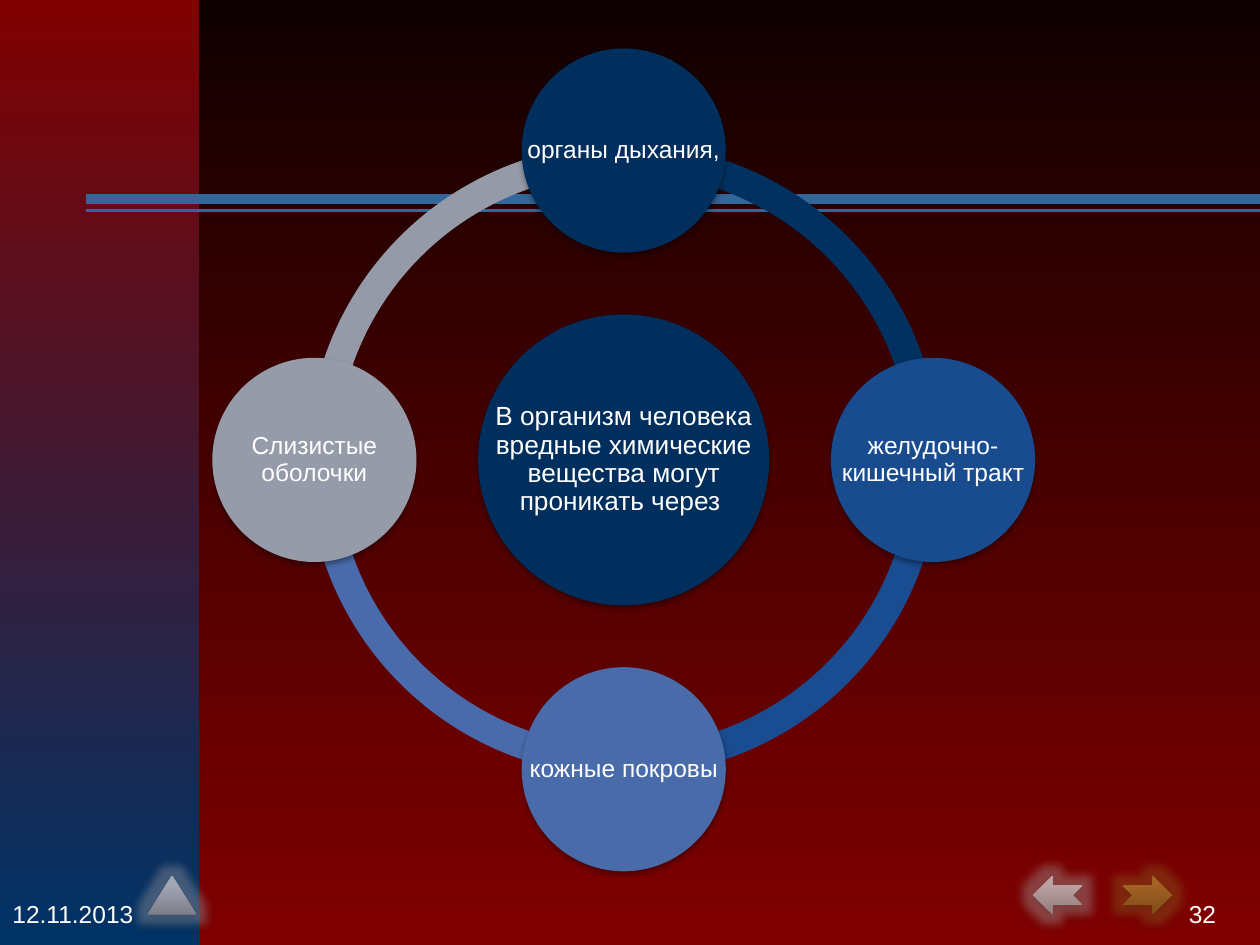
from math import cos, sin, radians
from lxml import etree
from pptx import Presentation
from pptx.dml.color import RGBColor
from pptx.enum import shapes, text
from pptx.oxml.ns import qn
from pptx.util import Inches, Pt

COLORS = {
    "white": "FFFFFF", "black": "000000", "night": "100000", "red": "800000",
    "navy": "003366", "rule": "336699", "hub": "002E5D", "blue": "194B8F",
    "sky": "496BAA", "grey": "959BA9", "navy arc": "003161", "blue arc": "1A4C91",
    "sky arc": "496BAB", "grey arc": "959AA8", "gold dark": "7E4C1B",
    "gold": "A36323", "rose dark": "927C7C", "rose": "BDA2A2",
    "steel dark": "7D808B", "steel": "A3A6B4",
}
FONT = "Arial"
HUB = "В организм человека вредные химические вещества могут проникать через "
# clockwise from the top: label, circle colour, colour of the arc that follows
ROUTES = [
    ("органы дыхания, ", "hub", "navy arc"),
    ("желудочно-кишечный тракт", "blue", "blue arc"),
    ("кожные покровы", "sky", "sky arc"),
    ("Слизистые оболочки", "grey", "grey arc"),
]
KIND = shapes.MSO_SHAPE
# left, shape, dark colour, light colour, flipped
BUTTONS = [
    (8.91, KIND.NOTCHED_RIGHT_ARROW, "gold dark", "gold", False),
    (8.2, KIND.NOTCHED_RIGHT_ARROW, "rose dark", "rose", True),
    (1.17, KIND.FLOWCHART_EXTRACT, "steel dark", "steel", False),
]
RULES = [(1.67, 2), (1.58, 6)]  # height on the slide, line width
MID_X, MID_Y, ORBIT = 4.95, 3.65, 2.455
RING, HUB_SIZE, NODE_SIZE = 5.02, 2.31, 1.62

deck = Presentation()
deck.slide_width, deck.slide_height = Inches(10), Inches(7.5)
slide = deck.slides.add_slide(deck.slide_layouts[6])


def rgb(name):
    return RGBColor.from_string(COLORS[name])


def blend(fill, first, last, angle, end=1):
    fill.gradient()
    fill.gradient_angle = angle
    for stop, name, pos in zip(fill.gradient_stops, (first, last), (0, end)):
        stop.color.rgb = rgb(name)
        stop.position = pos


def effects(shape, shadow=None, glow=None):
    """Set the glow colour and the shadow's (alpha, distance), or no effects."""
    props = shape._element.spPr
    for old in props.findall(qn("a:effectLst")):
        props.remove(old)
    box = etree.SubElement(props, qn("a:effectLst"))

    def add(tag, name, alpha, **attrs):
        node = etree.SubElement(box, qn(tag), attrs)
        tint = etree.SubElement(node, qn("a:srgbClr"), val=COLORS[name])
        etree.SubElement(tint, qn("a:alpha"), val=str(alpha * 1000))

    if glow:
        add("a:glow", glow, 40, rad=str(Pt(11)))
    if shadow:
        alpha, dist = shadow
        add("a:outerShdw", "black", alpha, blurRad=str(Pt(3.1)),
            dist=str(Pt(dist)), dir="5400000", rotWithShape="0")


def form(kind, x, y, w, h, fill=None):
    shape = slide.shapes.add_shape(kind, *map(Inches, (x, y, w, h)))
    shape.shadow.inherit = False
    shape.line.fill.background()
    if fill:
        shape.fill.solid()
        shape.fill.fore_color.rgb = rgb(fill)
    return shape


def label(words, x, y, w, h, size, align, inset=(0.1, 0.05), wrap=True):
    frame = slide.shapes.add_textbox(*map(Inches, (x, y, w, h))).text_frame
    frame.word_wrap = wrap
    frame.vertical_anchor = text.MSO_ANCHOR.MIDDLE
    frame.margin_left = frame.margin_right = Inches(inset[0])
    frame.margin_top = frame.margin_bottom = Inches(inset[1])
    para = frame.paragraphs[0]
    para.alignment = align
    run = para.add_run()
    run.text = words
    run.font.name, run.font.size = FONT, Pt(size)
    run.font.color.rgb = rgb("white")
    return para


def disc(words, x, y, size, fill, points, shadow):
    """Draw a circle centred on x, y with its label."""
    box = (x - size / 2, y - size / 2, size, size)
    effects(form(KIND.OVAL, *box, fill), shadow)
    para = label(words, *box, points, text.PP_ALIGN.CENTER, (0.02, 0.02))
    para.line_spacing = 0.9


blend(slide.background.fill, "night", "red", 270)
blend(form(KIND.RECTANGLE, 0, 0, 1.58, 7.5).fill, "red", "navy", 270)

for y, width in RULES:
    rule = slide.shapes.add_connector(
        shapes.MSO_CONNECTOR.STRAIGHT, *map(Inches, (0.68, y, 10, y)))
    rule.line.color.rgb, rule.line.width = rgb("rule"), Pt(width)
    effects(rule)

for i, (_, _, tone) in reversed(list(enumerate(ROUTES))):
    arc = form(KIND.BLOCK_ARC, MID_X - RING / 2, MID_Y - RING / 2, RING, RING, tone)
    # an angle adjustment of 54 is a quarter turn
    start = (i + 3) % 4 * 54
    for k, value in enumerate((start, (start + 54) % 216, 0.046)):
        arc.adjustments[k] = value

disc(HUB, MID_X, MID_Y, HUB_SIZE, "hub", 15, (38, 1.6))
for i, (words, tone, _) in enumerate(ROUTES):
    turn = radians(90 * i - 90)
    disc(words, MID_X + ORBIT * cos(turn), MID_Y + ORBIT * sin(turn),
         NODE_SIZE, tone, 14, (35, 1.8))

label("12.11.2013", 0, 7, 2.08, 0.5, 14, text.PP_ALIGN.LEFT)
label("32", 7.67, 7, 2.08, 0.5, 14, text.PP_ALIGN.RIGHT, wrap=False)

for x, kind, dark, light, flip in BUTTONS:
    button = form(kind, x, 6.95, 0.39, 0.31)
    blend(button.fill, dark, light, 90, 0.8)
    effects(button, (35, 1.8), light)
    if flip:
        button._element.spPr.find(qn("a:xfrm")).set("flipH", "1")

deck.save("out.pptx")
